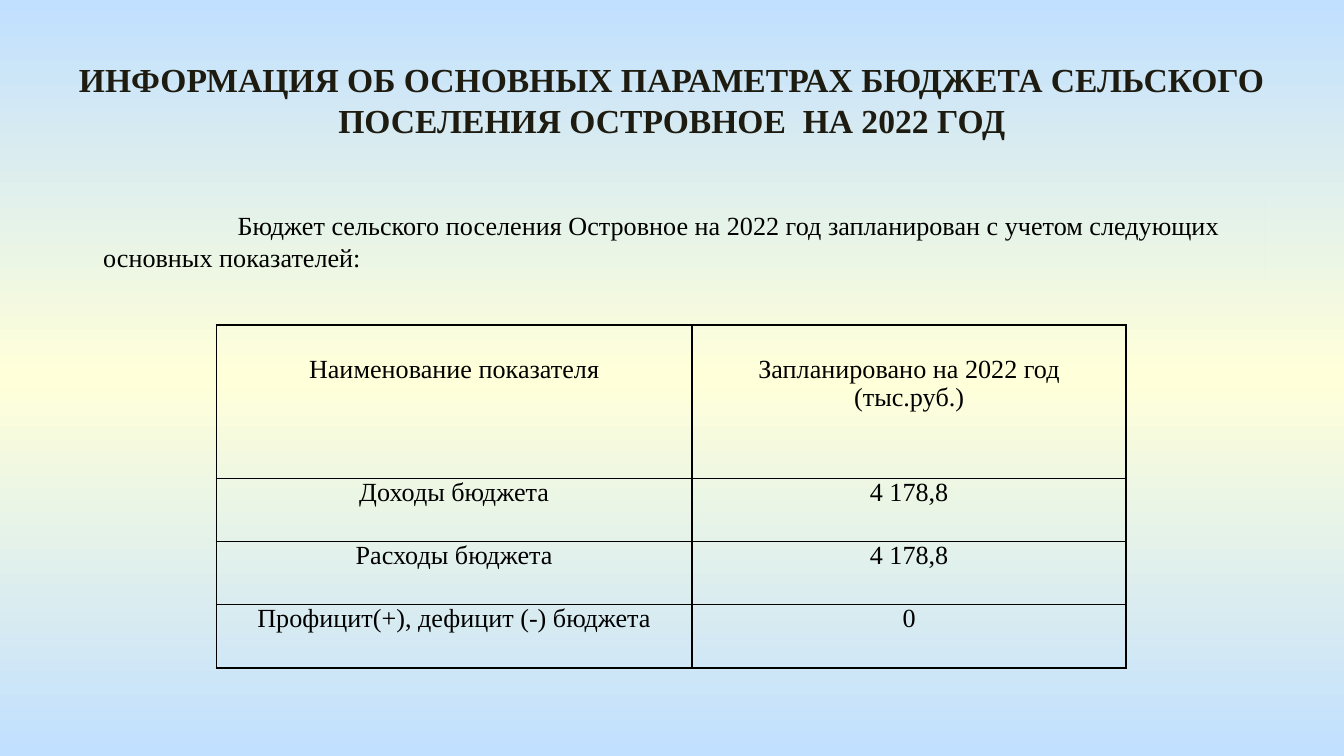
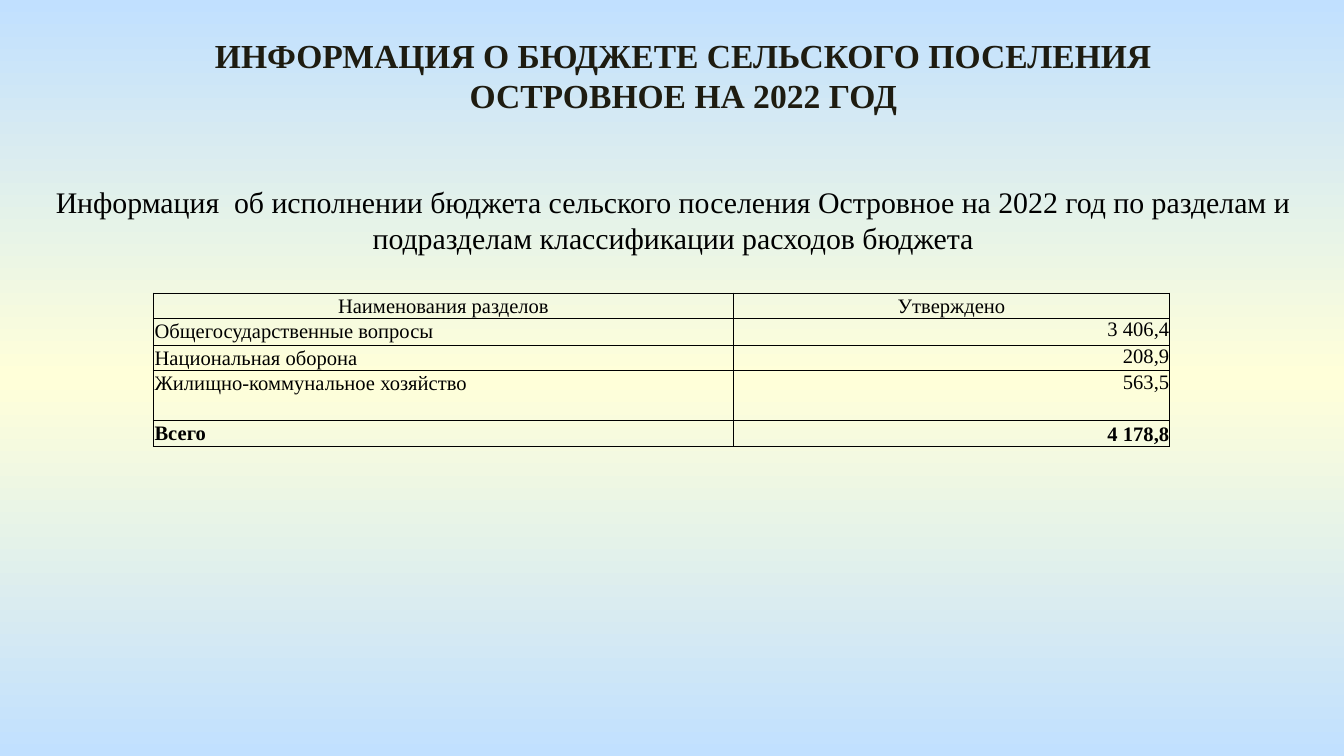
import copy
import pptx
import pptx.util
import pptx.dml.color
import pptx.enum.shapes
import pptx.enum.text
import pptx.oxml
import pptx.oxml.ns

ALIGN = pptx.enum.text.PP_ALIGN
ANCHOR = pptx.enum.text.MSO_ANCHOR
qn = pptx.oxml.ns.qn

# Shared style
FONT = "Times New Roman"
BLACK, DARK = "000000", "1E1C11"
SKY, CREAM = "C1E0FF", "FFFFD9"
COLS, ROWS = 100, 56.25  # square grid over the slide
UNIT = pptx.util.Inches(10) / COLS


def grid(*vals):
    return [round(v * UNIT) for v in vals]


def color(code):
    return pptx.dml.color.RGBColor.from_string(code)


def write(par, text, size, align, code=BLACK, bold=False):
    par.alignment = align
    run = par.add_run()
    run.text = text
    font = run.font
    font.name, font.size, font.bold = FONT, pptx.util.Pt(size), bold
    font.color.rgb = color(code)


def place(shape, area):
    shape.left, shape.top, shape.width, shape.height = grid(*area)


def setup(frame):
    frame.word_wrap = True
    frame.auto_size = pptx.enum.text.MSO_AUTO_SIZE.NONE
    frame.vertical_anchor = ANCHOR.TOP
    return frame.paragraphs[0]


# Blue to cream to blue, set once on the master
def backdrop(master):
    fill = master.background.fill
    fill.gradient()
    stops = master.element.find(".//" + qn("a:gsLst"))
    stops.append(copy.deepcopy(stops[0]))
    for stop, code, pos in zip(fill.gradient_stops, (SKY, CREAM, SKY), (0, 0.5, 1)):
        stop.color.rgb = color(code)
        stop.position = pos
    fill.gradient_angle = 90


def page(deck, title, area):
    slide = deck.slides.add_slide(deck.slide_layouts[5])
    head = slide.shapes.title
    place(head, area)
    write(setup(head.text_frame), title, 18, ALIGN.CENTER, DARK, True)
    return slide


def note(slide, text, area, size):
    box = slide.shapes.add_textbox(*grid(*area))
    write(setup(box.text_frame), text, size, ALIGN.CENTER)


# Panel that takes its fill from the slide background
def panel(slide, text, area, size, indent):
    kind = pptx.enum.shapes.MSO_SHAPE.RECTANGLE
    shape = slide.shapes.add_shape(kind, *grid(*area))
    shape.shadow.inherit = False
    shape.element.remove(shape.element.find(qn("p:style")))
    shape.element.set("useBgFill", "1")
    par = setup(shape.text_frame)
    shape.text_frame.margin_top = grid(1)[0]
    write(par, text, size, ALIGN.LEFT)
    par.alignment = ALIGN.LEFT
    par._p.get_or_add_pPr().set("indent", str(grid(indent)[0]))


def border(cell, width):
    props = cell._tc.get_or_add_tcPr()
    for side in "LRTB":
        line = pptx.oxml.parse_xml(
            f'<a:ln{side} {pptx.oxml.ns.nsdecls("a")} w="{pptx.util.Pt(width)}">'
            f'<a:solidFill><a:srgbClr val="{BLACK}"/></a:solidFill></a:ln{side}>')
        props.append(line)


def fit(cell, left, top, right, anchor=ANCHOR.TOP):
    cell.margin_left, cell.margin_top, cell.margin_right = grid(left, top, right)
    cell.margin_bottom = 0
    cell.vertical_anchor = anchor


def table(slide, spot, wide, high, data, size, line, style):
    area = grid(*spot, sum(wide), sum(high))
    made = slide.shapes.add_table(len(high), len(wide), *area).table
    made.first_row = made.horz_banding = False
    for col, width in zip(made.columns, wide):
        col.width = grid(width)[0]
    for r, (row, height) in enumerate(zip(made.rows, high)):
        row.height = grid(height)[0]
        for c, cell in enumerate(row.cells):
            border(cell, line)
            cell.fill.background()
            align, bold = style(cell, r, c)
            write(cell.text_frame.paragraphs[0], data[r][c], size, align, bold=bold)


# Plan table: all centred, header text set one line lower
def plan(cell, r, c):
    fit(cell, 0.7, 2.2 if r == 0 else 0, 0.7)
    return ALIGN.CENTER, False


# Section table: names left, sums right, total in bold
def parts(cell, r, c):
    last = r == 4
    if r == 0:
        fit(cell, 0.1, 0.1, 0.1, ANCHOR.BOTTOM if c else ANCHOR.MIDDLE)
        return ALIGN.CENTER, False
    if c:
        fit(cell, 0, 0, 0, ANCHOR.BOTTOM if last else ANCHOR.TOP)
        return ALIGN.RIGHT, last
    fit(cell, 0.1, 0.1, 0.1)
    return ALIGN.LEFT, last


def main():
    deck = pptx.Presentation()
    deck.slide_width, deck.slide_height = grid(COLS, ROWS)
    backdrop(deck.slide_master)

    # Main figures
    slide = page(deck, "ИНФОРМАЦИЯ ОБ ОСНОВНЫХ ПАРАМЕТРАХ БЮДЖЕТА СЕЛЬСКОГО "
                 "ПОСЕЛЕНИЯ ОСТРОВНОЕ  НА 2022 ГОД", (3.5, 3.9, 93, 7.1))
    panel(slide, "Бюджет сельского поселения Островное на 2022 год запланирован "
          "с учетом следующих основных показателей:", (6.7, 14.6, 87.4, 6.4), 14, 10)
    table(slide, (16.1, 24.2), (35.4, 32.3), (11.4, 4.7, 4.7, 4.7), (
        ("Наименование показателя", "Запланировано на 2022 год (тыс.руб.)"),
        ("Доходы бюджета", "4 178,8"),
        ("Расходы бюджета", "4 178,8"),
        ("Профицит(+), дефицит (-) бюджета", "0"),
    ), 14, 1, plan)

    # Spending by section
    slide = page(deck, "ИНФОРМАЦИЯ О БЮДЖЕТЕ СЕЛЬСКОГО ПОСЕЛЕНИЯ "
                 "ОСТРОВНОЕ НА 2022 ГОД", (12.2, 2.1, 77.3, 7.1))
    note(slide, "Информация  об исполнении бюджета сельского поселения Островное "
         "на 2022 год по разделам и подразделам классификации расходов бюджета",
         (0.1, 13.2, 100, 6.4), 16)
    table(slide, (11.4, 21.8), (43.2, 32.4), (1.9, 2, 1.9, 3.7, 1.9), (
        ("Наименования разделов", "Утверждено"),
        ("Общегосударственные вопросы", "3 406,4"),
        ("Национальная оборона", "208,9"),
        ("Жилищно-коммунальное хозяйство", "563,5"),
        ("Всего", "4 178,8"),
    ), 11, 0.5, parts)

    deck.save("out.pptx")


if __name__ == "__main__":
    main()
